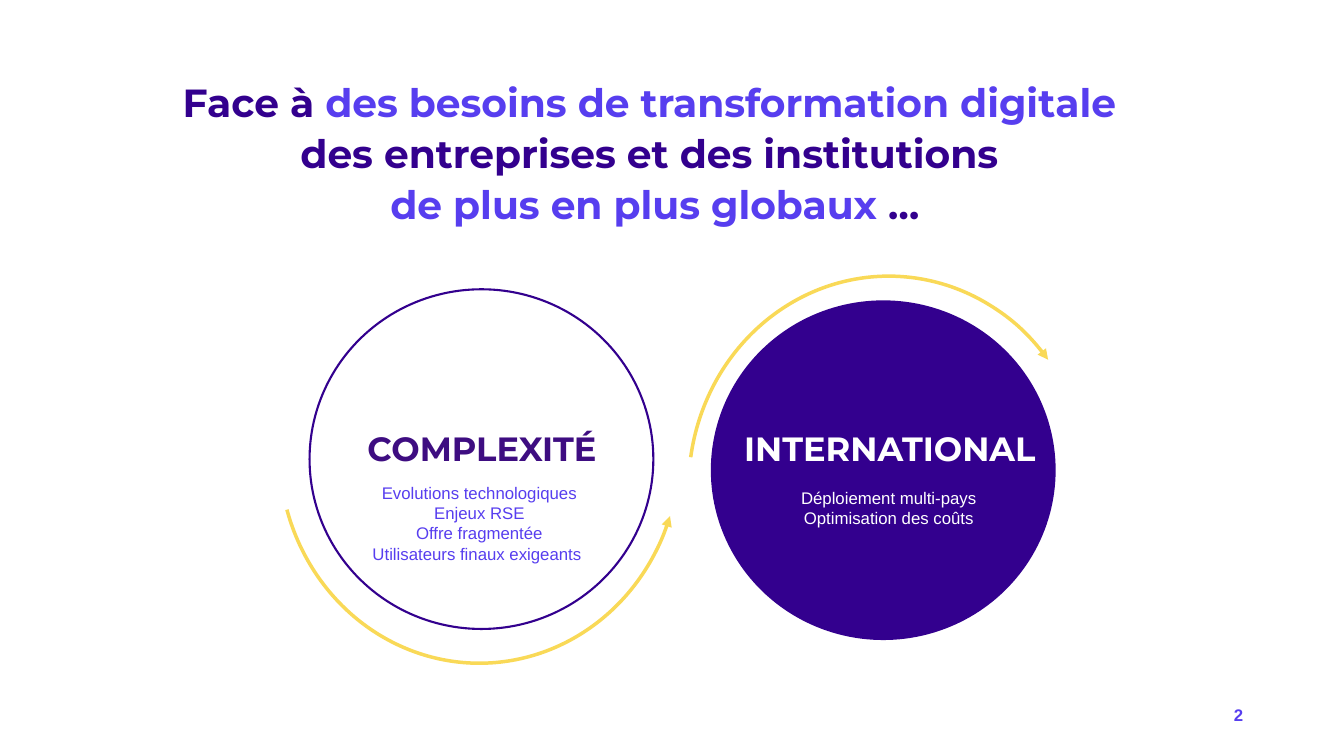
from dataclasses import dataclass

import lxml.etree
import pptx
import pptx.dml.color
import pptx.enum.shapes
import pptx.enum.text
import pptx.oxml.ns
import pptx.shapes.autoshape
import pptx.slide
import pptx.text.text
import pptx.util

Inches = pptx.util.Inches
Pt = pptx.util.Pt
RGBColor = pptx.dml.color.RGBColor
Shape = pptx.enum.shapes.MSO_SHAPE
Align = pptx.enum.text.PP_ALIGN
Anchor = pptx.enum.text.MSO_ANCHOR

INDIGO = RGBColor(0x33, 0x00, 0x8E)
PLUM = RGBColor(0x3E, 0x0D, 0x81)
VIOLET = RGBColor(0x57, 0x3E, 0xEF)
YELLOW = RGBColor(0xF9, 0xD9, 0x57)
WHITE = RGBColor(0xFF, 0xFF, 0xFF)

Box = tuple[float, float, float, float]


@dataclass(frozen=True)
class Label:
    box: Box
    lines: tuple[str, ...]
    color: RGBColor
    font: str = "Arial"
    size: int = 12
    bold: bool = False
    align: Align = Align.CENTER
    anchor: Anchor = Anchor.BOTTOM
    margins: tuple[float, float] = (0, 0)


@dataclass(frozen=True)
class Circle:
    box: Box
    fill: RGBColor | None
    line: RGBColor | None


@dataclass(frozen=True)
class Swoosh:
    box: Box
    angles: tuple[float, float]
    arrow_end: str


TITLE_BOX: Box = (0.5, 0.37, 11.99, 1.44)
TITLE_LINES = (
    (("Face à ", INDIGO), ("des besoins de transformation digitale ", VIOLET)),
    (("des entreprises et des institutions ", INDIGO),),
    (("de plus en plus globaux", VIOLET), (" …", INDIGO)),
)

CIRCLES = (
    Circle((3.07, 2.87, 3.41, 3.37), None, INDIGO),
    Circle((7.05, 2.98, 3.42, 3.37), INDIGO, None),
)

SWOOSHES = (
    Swoosh((2.77, 2.38, 3.97, 4.2), (18.71, 163.2), "headEnd"),
    Swoosh((6.83, 2.74, 3.97, 4.2), (188.79, 321.22), "tailEnd"),
)

LABELS = (
    Label((2.98, 4.2, 3.6, 0.5), ("COMPLEXITÉ",), PLUM, "Montserrat", 24, True,
          anchor=Anchor.MIDDLE, margins=(0.1, 0.05)),
    Label((6.58, 4.2, 4.49, 0.5), ("INTERNATIONAL",), WHITE, "Montserrat", 24, True,
          anchor=Anchor.MIDDLE, margins=(0.1, 0.05)),
    Label((3.66, 4.78, 2.19, 0.81),
          ("Evolutions technologiques", "Enjeux RSE", "Offre fragmentée",
           "Utilisateurs finaux exigeants "), VIOLET),
    Label((7.72, 4.84, 2.19, 0.4),
          ("Déploiement multi-pays", "Optimisation des coûts"), WHITE),
    Label((11.61, 6.99, 0.72, 0.2), ("2",), VIOLET, bold=True,
          align=Align.RIGHT, anchor=Anchor.TOP),
)


def add_frame(slide: pptx.slide.Slide, box: Box, margin_x: float,
              margin_y: float) -> pptx.text.text.TextFrame:
    frame = slide.shapes.add_textbox(*map(Inches, box)).text_frame
    frame.word_wrap = True
    frame.margin_left = frame.margin_right = Inches(margin_x)
    frame.margin_top = frame.margin_bottom = Inches(margin_y)
    return frame


def draw_title(slide: pptx.slide.Slide) -> None:
    frame = add_frame(slide, TITLE_BOX, 0, 0)
    frame.margin_top = Inches(0.46)
    for index, line in enumerate(TITLE_LINES):
        paragraph = frame.add_paragraph() if index else frame.paragraphs[0]
        paragraph.alignment = Align.CENTER
        paragraph.line_spacing = 0.9
        paragraph.space_before = Pt(6 if index else 0)
        paragraph.font.name = "Montserrat"
        paragraph.font.size = Pt(28)
        paragraph.font.bold = True
        for text, color in line:
            run = paragraph.add_run()
            run.text = text
            run.font.color.rgb = color


def draw_label(slide: pptx.slide.Slide, label: Label) -> None:
    frame = add_frame(slide, label.box, *label.margins)
    frame.vertical_anchor = label.anchor
    frame.auto_size = pptx.enum.text.MSO_AUTO_SIZE.SHAPE_TO_FIT_TEXT
    for index, line in enumerate(label.lines):
        paragraph = frame.add_paragraph() if index else frame.paragraphs[0]
        paragraph.text = line
        paragraph.alignment = label.align
        paragraph.font.name = label.font
        paragraph.font.size = Pt(label.size)
        paragraph.font.bold = label.bold
        paragraph.font.color.rgb = label.color


def add_outline(slide: pptx.slide.Slide, kind: Shape, box: Box, color: RGBColor | None,
                width: float) -> pptx.shapes.autoshape.Shape:
    shape = slide.shapes.add_shape(kind, *map(Inches, box))
    shape.shadow.inherit = False
    shape.fill.background()
    if color is None:
        shape.line.fill.background()
    else:
        shape.line.color.rgb = color
        shape.line.width = Pt(width)
    return shape


def draw_circle(slide: pptx.slide.Slide, circle: Circle) -> None:
    disc = add_outline(slide, Shape.OVAL, circle.box, circle.line, 1.5)
    if circle.fill is not None:
        disc.fill.solid()
        disc.fill.fore_color.rgb = circle.fill


def draw_swoosh(slide: pptx.slide.Slide, swoosh: Swoosh) -> None:
    arc = add_outline(slide, Shape.ARC, swoosh.box, YELLOW, 2.5)
    for index, degrees in enumerate(swoosh.angles):
        arc.adjustments[index] = degrees * 0.6
    line = arc.element.spPr.find(pptx.oxml.ns.qn("a:ln"))
    lxml.etree.SubElement(line, pptx.oxml.ns.qn(f"a:{swoosh.arrow_end}"), type="triangle")


def main() -> None:
    deck = pptx.Presentation()
    deck.slide_width = Inches(13.33)
    deck.slide_height = Inches(7.5)
    slide = deck.slides.add_slide(deck.slide_layouts[6])
    draw_title(slide)
    for circle in CIRCLES:
        draw_circle(slide, circle)
    for swoosh in SWOOSHES:
        draw_swoosh(slide, swoosh)
    for label in LABELS:
        draw_label(slide, label)
    deck.save("out.pptx")


if __name__ == "__main__":
    main()
